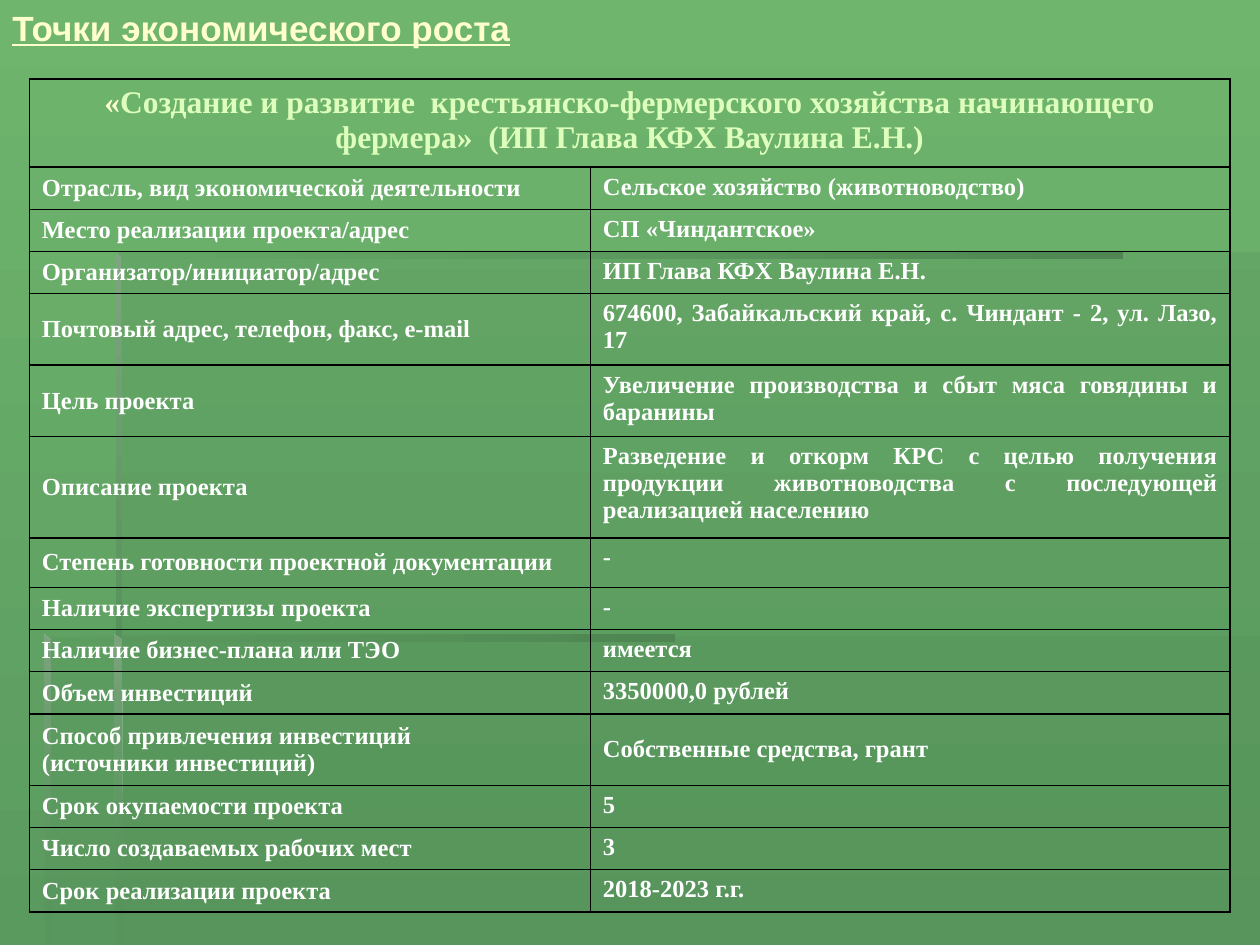
import pptx
import pptx.dml.color
import pptx.enum.text
import pptx.oxml
import pptx.oxml.ns
import pptx.util
from lxml import etree

Cm, Pt = pptx.util.Cm, pptx.util.Pt
ALIGN = pptx.enum.text.PP_ALIGN
ANCHOR = pptx.enum.text.MSO_ANCHOR
qn = pptx.oxml.ns.qn

COLOURS = {
    "top": "6FB56D", "bottom": "5A9A5F", "panel": "56925A",
    "shade": "4F8653", "light": "7DA57F", "cream": "FFFFCC",
    "lime": "DDFFBB", "white": "FFFFFF", "line": "000000",
}
W, H = 25.4, 19.05
ROW, DOUBLE_ROW = 0.85, 1.44
COLUMNS = (11.31, 12.9)
TITLE = (("«", "cream"),
         ("Создание и развитие  крестьянско-фермерского хозяйства начинающего "
          "фермера»  (ИП Глава КФХ Ваулина Е.Н.)", "lime"))
LEFT, JUSTIFY = ALIGN.LEFT, ALIGN.JUSTIFY

# label, value, row height, alignment of the value
ROWS = [
    ("Отрасль, вид экономической деятельности",
     "Сельское хозяйство (животноводство)", ROW, LEFT),
    ("Место реализации проекта/адрес", "СП «Чиндантское»", ROW, LEFT),
    ("Организатор/инициатор/адрес", "ИП Глава КФХ Ваулина Е.Н.", ROW, LEFT),
    ("Почтовый адрес, телефон, факс, e-mail",
     "674600, Забайкальский край, с. Чиндант - 2, ул. Лазо, 17",
     DOUBLE_ROW, JUSTIFY),
    ("Цель проекта", "Увеличение производства и сбыт мяса говядины и баранины",
     DOUBLE_ROW, JUSTIFY),
    ("Описание проекта",
     "Разведение и откорм КРС с целью получения продукции животноводства "
     "с последующей реализацией населению", 2.04, JUSTIFY),
    ("Степень готовности проектной документации", "-", 1.0, LEFT),
    ("Наличие экспертизы проекта", "-", ROW, LEFT),
    ("Наличие бизнес-плана или ТЭО", "имеется", ROW, LEFT),
    ("Объем инвестиций", "3350000,0 рублей", ROW, LEFT),
    ("Способ привлечения инвестиций\n(источники инвестиций)",
     "Собственные средства, грант", DOUBLE_ROW, JUSTIFY),
    ("Срок окупаемости проекта", "5", ROW, LEFT),
    ("Число создаваемых рабочих мест", "3", ROW, LEFT),
    ("Срок реализации проекта", "2018-2023 г.г.", ROW, LEFT),
]

# Backdrop outlines in cm, each with its (colour, opacity) stops and angle
BACKDROP = [
    ([(2.34, 12.83), (2.34, H), (W, H), (W, 12.83)], [("panel", 30)], 0),
    ([(2.39, 12.85), (0.91, 12.85), (0.91, H), (W, H), (W, 5.08),
      (2.39, 5.08)], [("panel", 30)], 0),
    ([(2.34, 5.08), (2.34, 5.21), (22.63, 5.21), (22.63, 5.08)],
     [("panel", 0), ("shade", 100)], 0),
    ([(2.34, 5.08), (2.34, 12.95), (2.46, 12.95), (2.44, 5.18)],
     [("light", 100), ("panel", 100)], 90),
    ([(2.31, H), (2.46, H), (2.44, 12.9), (2.31, 12.8)],
     [("light", 100), ("panel", 0)], 90),
    ([(0.89, 12.8), (0.89, 12.93), (13.59, 12.93), (13.59, 12.8)],
     [("panel", 0), ("shade", 100)], 0),
    ([(0.89, 12.8), (0.89, H), (1.02, H), (1.02, 12.93)],
     [("light", 100), ("panel", 10)], 90),
]


def rgb(name):
    return pptx.dml.color.RGBColor.from_string(COLOURS[name])


class SlideBuilder:
    def __init__(self, slide):
        self.slide = slide

    def gradient(self, fill, names, angle):
        """Fill with two colours; the angle runs clockwise."""
        fill.gradient()
        fill.gradient_angle = -angle % 360
        for stop, name, position in zip(fill.gradient_stops, names, (0, 1)):
            stop.color.rgb = rgb(name)
            stop.position = position

    def outline(self, points, stops, angle):
        points = [(Cm(x), Cm(y)) for x, y in points]
        builder = self.slide.shapes.build_freeform(*points[0])
        builder.add_line_segments(points[1:], close=True)
        sp = builder.convert_to_shape()
        sp.shadow.inherit = False
        sp.line.fill.background()
        names = [name for name, _ in stops]
        if len(stops) == 1:
            sp.fill.solid()
            sp.fill.fore_color.rgb = rgb(names[0])
        else:
            self.gradient(sp.fill, names, angle)
        colours = list(sp._element.spPr.iter(qn("a:srgbClr")))
        for colour, (_, opacity) in zip(colours, stops):
            if opacity < 100:
                etree.SubElement(colour, qn("a:alpha")).set(
                    "val", str(opacity * 1000))

    def style(self, r, size, colour, name="Times New Roman"):
        r.font.name = name
        r.font.size = Pt(size)
        r.font.bold = True
        r.font.color.rgb = rgb(colour)

    def heading(self, text):
        box = self.slide.shapes.add_textbox(0, 0, Cm(10.62), Cm(1.12))
        tf = box.text_frame
        tf.word_wrap = False
        tf.auto_size = pptx.enum.text.MSO_AUTO_SIZE.SHAPE_TO_FIT_TEXT
        tf.text = text
        r = tf.paragraphs[0].runs[0]
        self.style(r, 20, "cream", "Arial")
        r.font.underline = True

    def border(self, cell):
        tcPr = cell._tc.get_or_add_tcPr()
        for side in ("lnL", "lnR", "lnT", "lnB"):
            ln = etree.SubElement(tcPr, qn("a:" + side), w=str(Pt(1)))
            solid = etree.SubElement(ln, qn("a:solidFill"))
            etree.SubElement(solid, qn("a:srgbClr"), val=COLOURS["line"])
        cell.fill.background()

    def cell_text(self, cell, text, align, anchor):
        cell.text_frame.text = text
        cell.vertical_anchor = anchor
        for p in cell.text_frame.paragraphs:
            p.alignment = align
            for r in p.runs:
                self.style(r, 14, "white")

    def project_table(self, title, rows):
        heights = [1.77] + [row[2] for row in rows]
        table = self.slide.shapes.add_table(
            len(heights), len(COLUMNS), Cm(0.59), Cm(1.59),
            Cm(sum(COLUMNS)), Cm(sum(heights))).table
        table.first_row = table.horz_banding = False
        for column, width in zip(table.columns, COLUMNS):
            column.width = Cm(width)
        for row, height in zip(table.rows, heights):
            row.height = Cm(height)
        for cell in table.iter_cells():
            self.border(cell)

        head = table.cell(0, 0)
        head.merge(table.cell(0, 1))
        p = head.text_frame.paragraphs[0]
        p.alignment = ALIGN.CENTER
        for text, colour in title:
            r = p.add_run()
            r.text = text
            self.style(r, 18, colour)

        for i, (label, value, _, align) in enumerate(rows, 1):
            anchor = ANCHOR.MIDDLE if "\n" in label else ANCHOR.TOP
            self.cell_text(table.cell(i, 0), label, LEFT, ANCHOR.MIDDLE)
            self.cell_text(table.cell(i, 1), value, align, anchor)


def main():
    prs = pptx.Presentation()
    prs.slide_width, prs.slide_height = Cm(W), Cm(H)
    s = prs.slides.add_slide(prs.slide_layouts[6])
    builder = SlideBuilder(s)
    builder.gradient(s.background.fill, ("top", "bottom"), 90)
    for points, stops, angle in BACKDROP:
        builder.outline(points, stops, angle)
    builder.heading("Точки экономического роста")
    builder.project_table(TITLE, ROWS)
    prs.save("out.pptx")


if __name__ == "__main__":
    main()
